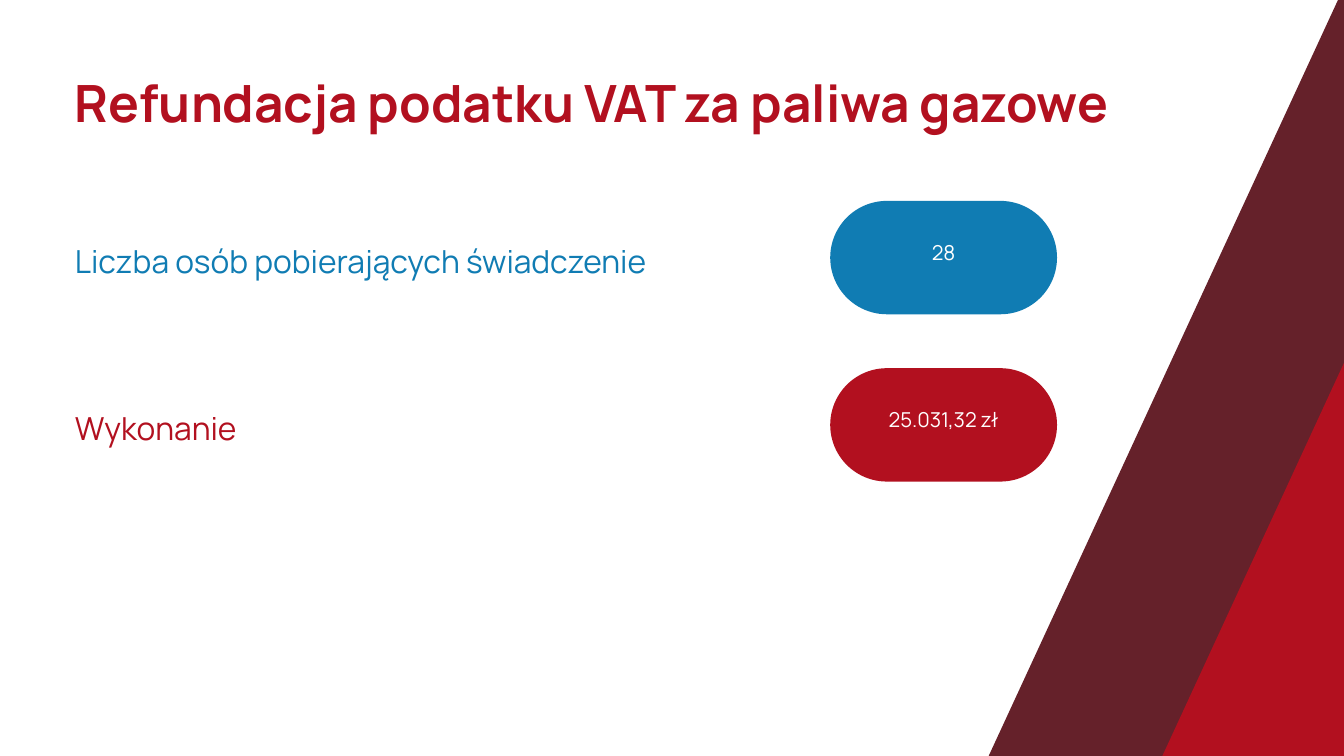
"""Build the slide on the VAT refund for gas fuels."""
from dataclasses import dataclass

from pptx import Presentation, util as u
from pptx.dml.color import RGBColor
from pptx.enum import shapes, text

PX = 9525


@dataclass(frozen=True)
class Theme:
    font: str = "Manrope"
    red: str = "B2101F"
    blue: str = "107CB3"
    maroon: str = "65212A"
    white: str = "FFFFFF"
    title_size: int = 55
    label_size: int = 34
    value_size: int = 22
    title_leading: float = 66
    label_leading: float = 47.6
    value_leading: float = 30.8


THEME = Theme()


def px(*lengths):
    return [u.Emu(length * PX) for length in lengths]


def write(frame, words, size, leading, color, bold=False,
          align=text.PP_ALIGN.LEFT, anchor=text.MSO_ANCHOR.TOP, insets=(0, 0, 0, 0)):
    frame.word_wrap = True
    frame.auto_size = text.MSO_AUTO_SIZE.NONE
    frame.vertical_anchor = anchor
    (frame.margin_left, frame.margin_top,
     frame.margin_right, frame.margin_bottom) = px(*insets)
    frame.text = words
    line = frame.paragraphs[0]
    line.alignment = align
    line.line_spacing = u.Pt(leading)
    line.space_before = u.Pt(0)
    font = line.runs[0].font
    font.name, font.size, font.bold = THEME.font, u.Pt(size), bold
    font.color.rgb = RGBColor.from_string(color)


def add_block(slide, kind, bounds, color):
    block = slide.shapes.add_shape(kind, *px(*bounds))
    block.shadow.inherit = False
    block.fill.solid()
    block.fill.fore_color.rgb = RGBColor.from_string(color)
    block.line.fill.background()
    return block


def add_title(slide, words):
    title = slide.shapes.title
    title.left, title.top, title.width, title.height = px(107, 102, 1704, 89)
    write(title.text_frame, words, THEME.title_size, THEME.title_leading,
          THEME.red, bold=True)


def add_band(slide, bounds, color):
    band = add_block(slide, shapes.MSO_SHAPE.RECTANGLE, bounds, color)
    band.rotation = 294.8


def add_figure(slide, top, label, value, color):
    pill = add_block(slide, shapes.MSO_SHAPE.ROUNDED_RECTANGLE,
                     (1186, top, 324, 162), color)
    pill.adjustments[0] = 0.5
    write(pill.text_frame, value, THEME.value_size, THEME.value_leading,
          THEME.white, align=text.PP_ALIGN.CENTER,
          anchor=text.MSO_ANCHOR.MIDDLE, insets=(6, 6, 6, 28))
    caption = slide.shapes.add_textbox(*px(107, top + 49, 964, 64))
    write(caption.text_frame, label, THEME.label_size, THEME.label_leading, color)


def main():
    deck = Presentation()
    deck.slide_width, deck.slide_height = px(1920, 1080)
    slide = deck.slides.add_slide(deck.slide_layouts[5])
    add_title(slide, "Refundacja podatku VAT za paliwa gazowe")
    add_band(slide, (977, 413, 1633, 228), THEME.maroon)
    add_band(slide, (1348, 306, 1639, 467), THEME.red)
    figures = [
        ("Liczba osób pobierających świadczenie", "28", THEME.blue),
        ("Wykonanie", "25.031,32 zł", THEME.red),
    ]
    for row, (label, value, color) in enumerate(figures):
        add_figure(slide, 287 + row * 239, label, value, color)
    deck.save("out.pptx")


if __name__ == "__main__":
    main()
